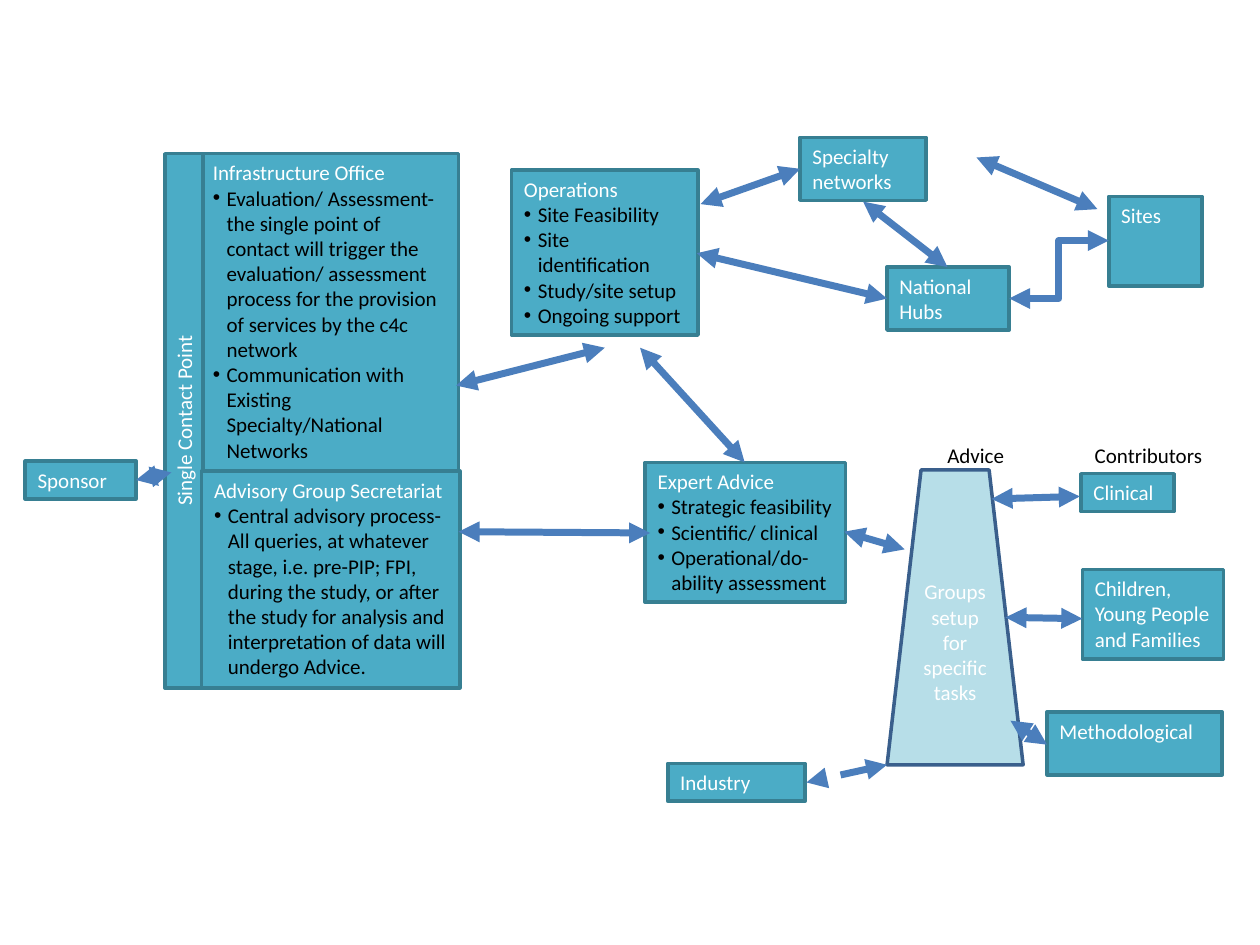
from dataclasses import dataclass

from lxml import etree
from pptx import Presentation
from pptx.dml.color import RGBColor
from pptx.enum import dml, shapes, text
from pptx.oxml.ns import qn
from pptx.util import Inches, Pt


@dataclass(frozen=True)
class Theme:
    font: str = "Calibri"
    size: int = 12
    box_fill: str = "4BACC6"
    box_line: str = "377F92"
    group_fill: str = "B7DEE8"
    group_line: str = "3A5F8C"
    arrow: str = "4B7EBC"
    light: str = "FFFFFF"
    dark: str = "000000"
    outline: int = 2
    arrow_width: int = 4


THEME = Theme()

# left, top, width, height, heading, bulleted points
BOXES = [
    (1.59, 1.22, 2.05, 2.52, "Infrastructure Office", [
        "Evaluation/ Assessment- the single point of contact will trigger the evaluation/ "
        "assessment process for the provision of services by the c4c network",
        "Communication with Existing Specialty/National Networks"]),
    (4.06, 1.35, 1.48, 1.31, "Operations", [
        "Site Feasibility", "Site identification", "Study/site setup", "Ongoing support"]),
    (5.12, 3.67, 1.59, 1.11, "Expert Advice", [
        "Strategic feasibility", "Scientific/ clinical", "Operational/do-ability assessment"]),
    (8.8, 1.56, 0.74, 0.71, "Sites", []),
    (7.04, 2.12, 0.97, 0.5, "National Hubs", []),
    (8.31, 5.65, 1.39, 0.5, "Methodological", []),
    (8.58, 3.76, 0.74, 0.3, "Clinical", []),
    (0.2, 3.66, 0.88, 0.3, "Sponsor", []),
    (6.35, 1.09, 1, 0.5, "Specialty networks", []),
    (5.3, 6.06, 1.09, 0.3, "Industry", []),
    (8.59, 4.52, 1.12, 0.71, "Children, Young People and Families", []),
]
CONTACT_POINT = (-0.66, 3.19, 4.24, 0.3, "Single Contact Point", [])
SECRETARIAT = (1.6, 3.74, 2.05, 1.72, "Advisory Group Secretariat", [
    "Central advisory process- All queries, at whatever stage, i.e. pre-PIP; FPI, during the "
    "study, or after the study for analysis and interpretation of data will undergo Advice."])

# start x, start y, end x, end y
ARROWS = [
    (1.08, 3.81, 1.36, 3.75),  # Sponsor - Single Contact Point
    (5.56, 1.62, 6.35, 1.34),  # Operations - Specialty networks
    (7.52, 2.12, 6.85, 1.6),   # National Hubs - Specialty networks
    (8.71, 1.66, 7.75, 1.25),  # Sites - Specialty networks
    (7.98, 4.9, 8.59, 4.91),   # Groups - Children
    (7.87, 3.96, 8.57, 3.94),  # Groups - Clinical
    (8.02, 5.72, 8.31, 5.91),  # Groups - Methodological
    (4.8, 2.76, 3.62, 3.06),   # Operations - Infrastructure Office
    (5.08, 2.76, 5.91, 3.67),  # Operations - Expert Advice
    (7.04, 2.37, 5.53, 2.01),  # National Hubs - Operations
    (5.16, 4.23, 3.64, 4.22),  # Expert Advice - Secretariat
    (7.18, 4.36, 6.7, 4.22),   # Groups - Expert Advice
]
HUBS_TO_SITES = (8.01, 2.37, 8.8, 1.91)
GROUPS_TO_INDUSTRY = (7.04, 6.07, 6.4, 6.21)


def rgb(code):
    return RGBColor.from_string(code)


def style_paragraph(paragraph, color, align=text.PP_ALIGN.LEFT):
    paragraph.alignment = align
    font = paragraph.font
    font.name, font.size = THEME.font, Pt(THEME.size)
    font.color.rgb = rgb(color)


def add_point(frame, point):
    paragraph = frame.add_paragraph()
    paragraph.text = point
    properties = paragraph._p.get_or_add_pPr()
    properties.set("marL", str(Inches(0.11)))
    properties.set("indent", str(-Inches(0.11)))
    etree.SubElement(properties, qn("a:buFont")).set("typeface", "Arial")
    etree.SubElement(properties, qn("a:buChar")).set("char", "•")
    style_paragraph(paragraph, THEME.dark)


def add_filled(slide, preset, bounds, fill, line):
    shape = slide.shapes.add_shape(preset, *map(Inches, bounds))
    shape.shadow.inherit = False
    shape.fill.solid()
    shape.fill.fore_color.rgb = rgb(fill)
    shape.line.color.rgb = rgb(line)
    shape.line.width = Pt(THEME.outline)
    shape.text_frame.word_wrap = True
    return shape


def add_box(slide, box, align=text.PP_ALIGN.LEFT):
    *bounds, heading, points = box
    shape = add_filled(slide, shapes.MSO_SHAPE.RECTANGLE, bounds, THEME.box_fill, THEME.box_line)
    frame = shape.text_frame
    frame.auto_size = text.MSO_AUTO_SIZE.SHAPE_TO_FIT_TEXT
    frame.vertical_anchor = text.MSO_ANCHOR.TOP
    frame.text = heading
    style_paragraph(frame.paragraphs[0], THEME.light, align)
    for point in points:
        add_point(frame, point)
    return shape


def add_groups(slide):
    groups = add_filled(slide, shapes.MSO_SHAPE.TRAPEZOID, (7.04, 3.73, 1.08, 2.34),
                        THEME.group_fill, THEME.group_line)
    groups.text_frame.vertical_anchor = text.MSO_ANCHOR.MIDDLE
    groups.text_frame.text = "Groups setup for specific tasks"
    style_paragraph(groups.text_frame.paragraphs[0], THEME.light, text.PP_ALIGN.CENTER)


def add_label(slide, left, width, wording):
    label = slide.shapes.add_textbox(Inches(left), Inches(3.46), Inches(width), Inches(0.3))
    frame = label.text_frame
    frame.word_wrap = False
    frame.auto_size = text.MSO_AUTO_SIZE.SHAPE_TO_FIT_TEXT
    frame.text = wording
    style_paragraph(frame.paragraphs[0], THEME.dark)


def add_arrow(slide, ends, kind=shapes.MSO_CONNECTOR.STRAIGHT, dashed=False):
    """Draw a connector with an arrowhead at both ends."""
    arrow = slide.shapes.add_connector(kind, *map(Inches, ends))
    arrow.line.color.rgb = rgb(THEME.arrow)
    arrow.line.width = Pt(THEME.arrow_width)
    if dashed:
        arrow.line.dash_style = dml.MSO_LINE.DASH
    outline = arrow.line._get_or_add_ln()
    for end in ("a:headEnd", "a:tailEnd"):
        etree.SubElement(outline, qn(end)).set("type", "triangle")
    etree.SubElement(arrow._element.spPr, qn("a:effectLst"))


def main():
    deck = Presentation()
    deck.slide_width, deck.slide_height = Inches(10), Inches(7.5)
    slide = deck.slides.add_slide(deck.slide_layouts[6])

    for box in BOXES:
        add_box(slide, box)
    add_box(slide, CONTACT_POINT, text.PP_ALIGN.CENTER).rotation = 270
    add_box(slide, SECRETARIAT)
    add_groups(slide)
    add_label(slide, 8.59, 1.06, "Contributors")
    add_label(slide, 7.42, 0.66, "Advice")

    add_arrow(slide, HUBS_TO_SITES, shapes.MSO_CONNECTOR.ELBOW)
    add_arrow(slide, GROUPS_TO_INDUSTRY, dashed=True)
    for ends in ARROWS:
        add_arrow(slide, ends)

    deck.save("out.pptx")


if __name__ == "__main__":
    main()
